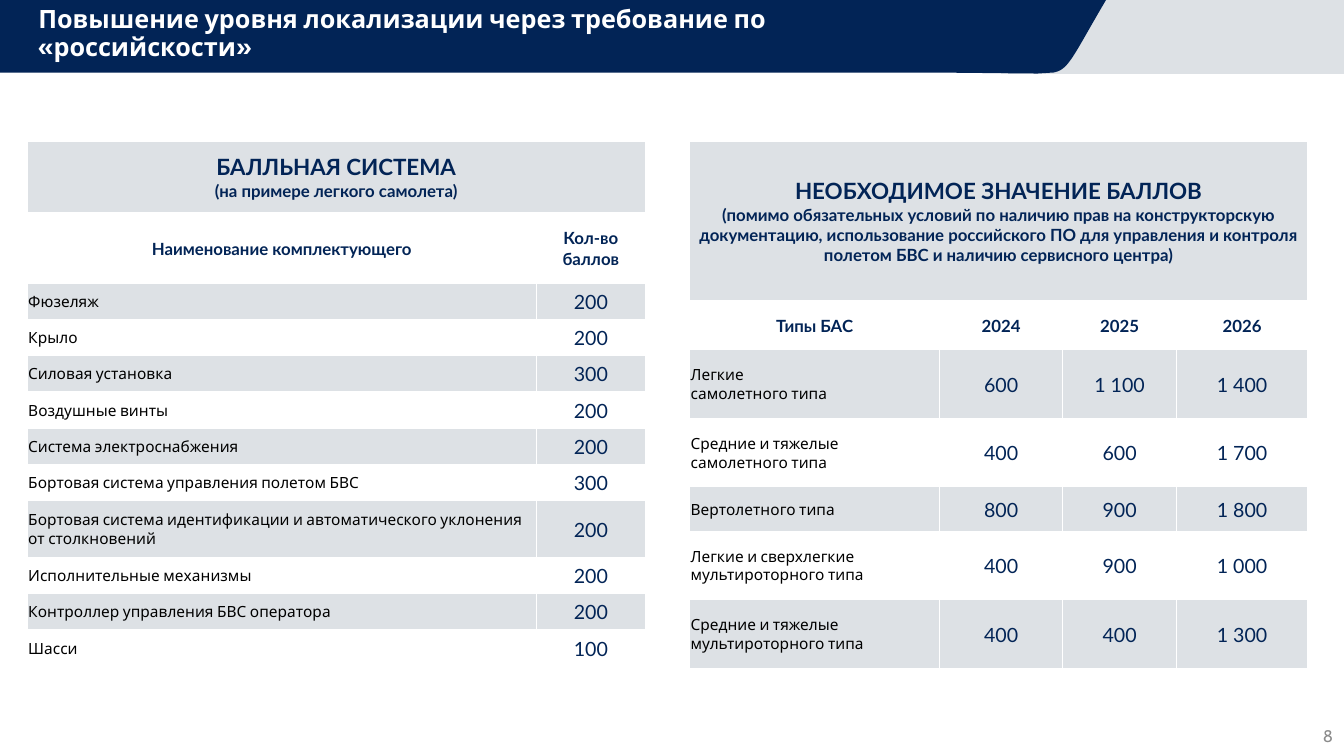
"""Build the slide on localization scoring for unmanned aircraft."""
from lxml import etree
from pptx import Presentation
from pptx.dml.color import RGBColor
from pptx.enum.text import MSO_ANCHOR, PP_ALIGN
from pptx.oxml.ns import qn
from pptx.util import Inches, Pt

LEFT, CENTER, RIGHT = PP_ALIGN.LEFT, PP_ALIGN.CENTER, PP_ALIGN.RIGHT
MIDDLE = MSO_ANCHOR.MIDDLE
COLORS = {"navy": "022456", "gray": "DDE1E5", "white": "FFFFFF",
          "black": "000000", "number": "8C8C8C"}

TITLE = "Повышение уровня локализации через требование по «российскости»"
PAGE_NUMBER = "8"
TABLES = [
    {
        "left": 0.27,
        "columns": [5.05, 1.08],
        "heights": [0.71, 0.7] + [0.36] * 6 + [0.56] + [0.36] * 3,
        "heading": "БАЛЛЬНАЯ СИСТЕМА\n(на примере легкого самолета)",
        "rows": [
            ("Наименование комплектующего", "Кол-во баллов"),
            ("Фюзеляж", "200"),
            ("Крыло", "200"),
            ("Силовая установка", "300"),
            ("Воздушные винты", "200"),
            ("Система электроснабжения", "200"),
            ("Бортовая система управления полетом БВС", "300"),
            ("Бортовая система идентификации и автоматического уклонения "
             "от столкновений", "200"),
            ("Исполнительные механизмы", "200"),
            ("Контроллер управления БВС оператора", "200"),
            ("Шасси", "100"),
        ],
    },
    {
        "left": 6.84,
        "columns": [2.48, 1.22, 1.13, 1.3],
        "heights": [1.58, 0.49, 0.68, 0.68, 0.44, 0.68, 0.68],
        "heading": "НЕОБХОДИМОЕ ЗНАЧЕНИЕ БАЛЛОВ\n"
                   "(помимо обязательных условий по наличию прав на конструкторскую "
                   "документацию, использование российского ПО для управления и "
                   "контроля полетом БВС и наличию сервисного центра)",
        "rows": [
            ("Типы БАС", "2024", "2025", "2026"),
            ("Легкие\nсамолетного типа", "600", "1 100", "1 400"),
            ("Средние и тяжелые\nсамолетного типа", "400", "600", "1 700"),
            ("Вертолетного типа", "800", "900", "1 800"),
            ("Легкие и сверхлегкие\nмультироторного типа", "400", "900", "1 000"),
            ("Средние и тяжелые\nмультироторного типа", "400", "400", "1 300"),
        ],
    },
]
TABLE_TOP = 1.4

GRAY_BAND = [(9.93, 0), (13.33, 0), (13.33, 0.73), (9.93, 0.73)]
BAND_CURVE = [(10.97, 0), (10.63, 0.58), (10.6, 0.69), (10.45, 0.72)]
BAND_BOTTOM = [(10.29, 0.73), (9.24, 0.72), (0, 0.72)]


def color(name):
    return RGBColor.from_string(COLORS[name])


def bezier(points, steps=24):
    weights = [1, 3, 3, 1]
    return [
        tuple(sum(weight * (1 - t) ** (3 - i) * t ** i * point[axis]
                  for i, (weight, point) in enumerate(zip(weights, points)))
              for axis in (0, 1))
        for t in (step / steps for step in range(steps + 1))
    ]


def add_band(slide, points, fill):
    vertices = [(Inches(x), Inches(y)) for x, y in points]
    builder = slide.shapes.build_freeform(*vertices[0])
    builder.add_line_segments(vertices[1:], close=True)
    shape = builder.convert_to_shape()
    shape.shadow.inherit = False
    shape.fill.solid()
    shape.fill.fore_color.rgb = color(fill)
    shape.line.fill.background()


def style(paragraph, size, font_name, font_color, bold=False, align=LEFT):
    paragraph.alignment = align
    font = paragraph.font
    font.size, font.name, font.bold = Pt(size), font_name, bold
    font.color.rgb = color(font_color)


def add_text(slide, text, box, margin, **text_style):
    frame = slide.shapes.add_textbox(*map(Inches, box)).text_frame
    frame.word_wrap = True
    frame.vertical_anchor = MIDDLE
    frame.margin_left = frame.margin_right = Inches(margin)
    frame.margin_top = frame.margin_bottom = Inches(margin / 2)
    paragraph = frame.paragraphs[0]
    paragraph.text = text
    style(paragraph, **text_style)
    return paragraph


def format_cell(cell, shaded):
    cell.vertical_anchor = MIDDLE
    cell.margin_left = cell.margin_right = cell.margin_top = Inches(0.01)
    cell.margin_bottom = 0
    properties = cell._tc.get_or_add_tcPr()
    for side in ("a:lnL", "a:lnR", "a:lnT", "a:lnB"):
        line = etree.SubElement(properties, qn(side), w=str(Pt(1)))
        fill = etree.SubElement(line, qn("a:solidFill"))
        etree.SubElement(fill, qn("a:srgbClr"), val=COLORS["white"])
    if shaded:
        cell.fill.solid()
        cell.fill.fore_color.rgb = color("gray")
    else:
        cell.fill.background()


def cell_style(row, column, line):
    if row < 2:
        size = 16 if row == 0 and line == 0 else 12
        return size, "Lato", "navy", True, CENTER
    if column == 0:
        return 11, "Cabin", "black"
    return 14, "Lato", "navy", False, CENTER


def add_score_table(slide, left, columns, heights, heading, rows):
    frame = slide.shapes.add_table(
        len(heights), len(columns), Inches(left), Inches(TABLE_TOP),
        Inches(sum(columns)), Inches(sum(heights)))
    table = frame.table
    table.first_row = table.horz_banding = False
    for column, width in zip(table.columns, columns):
        column.width = Inches(width)
    for row, height in zip(table.rows, heights):
        row.height = Inches(height)
    table.cell(0, 0).merge(table.cell(0, len(columns) - 1))
    for row, values in enumerate([(heading,)] + rows):
        for column in range(len(columns)):
            cell = table.cell(row, column)
            format_cell(cell, row % 2 == 0)
            if column < len(values):
                cell.text = values[column]
                for line, paragraph in enumerate(cell.text_frame.paragraphs):
                    style(paragraph, *cell_style(row, column, line))


def main():
    presentation = Presentation()
    presentation.slide_width = Inches(13.33)
    presentation.slide_height = Inches(7.5)
    slide = presentation.slides.add_slide(presentation.slide_layouts[6])
    add_band(slide, GRAY_BAND, "gray")
    add_band(slide, [(0, 0)] + bezier(BAND_CURVE) + BAND_BOTTOM, "navy")
    title = add_text(slide, TITLE, (0.38, 0, 9.33, 0.68), 0, size=18,
                     font_name="Cabin", font_color="white", bold=True)
    title.line_spacing = 0.9
    for table in TABLES:
        add_score_table(slide, **table)
    add_text(slide, PAGE_NUMBER, (10.32, 7.1, 3, 0.4), 0.1, size=12,
             font_name="Cabin", font_color="number", align=RIGHT)
    presentation.save("out.pptx")


if __name__ == "__main__":
    main()
